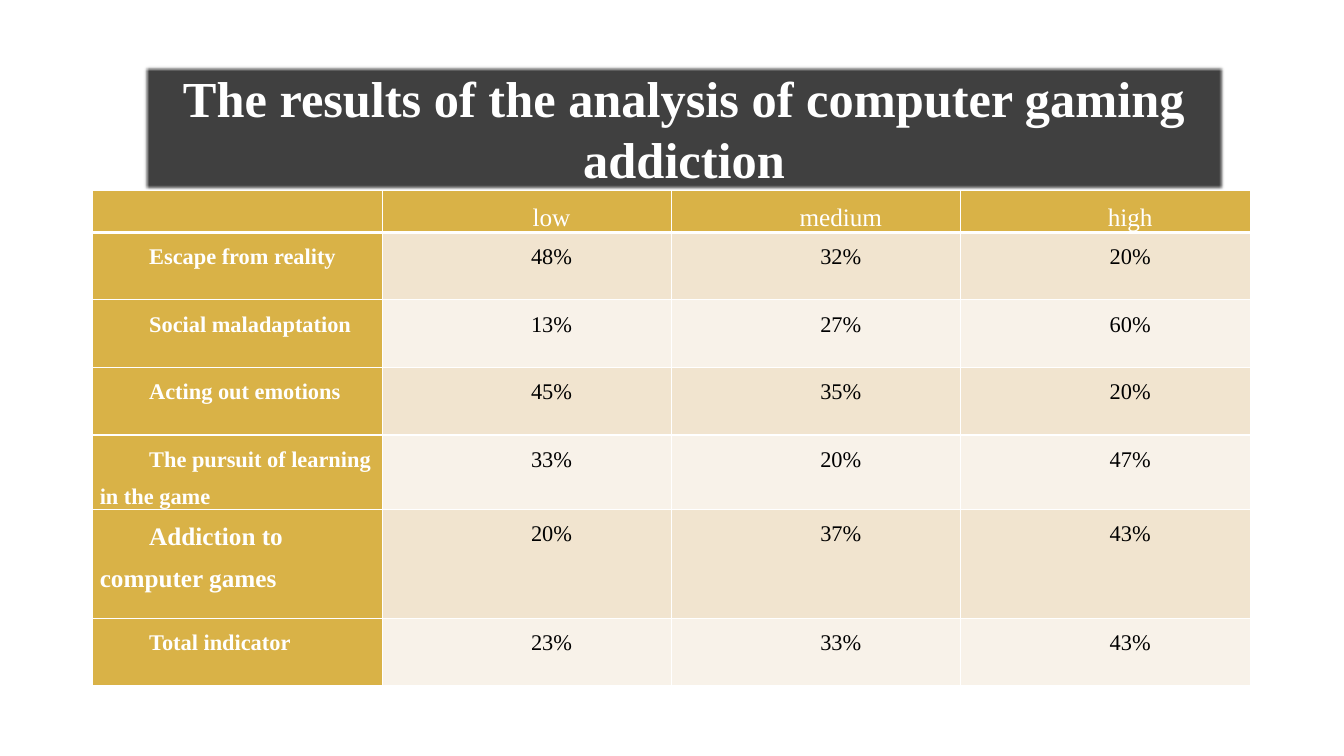
from lxml import etree
from pptx import Presentation
from pptx.dml.color import RGBColor
from pptx.enum import shapes, text
from pptx.oxml.ns import qn
from pptx.util import Inches, Pt

FONT = "Times New Roman"
WHITE, BLACK, CHARCOAL = "FFFFFF", "000000", "404040"
GOLD, SAND, CREAM = "D9B247", "F1E4CF", "F8F2E9"
LEVELS = ["", "low", "medium", "high"]
RESULTS = [
    ("Escape from reality", "48%", "32%", "20%"),
    ("Social maladaptation", "13%", "27%", "60%"),
    ("Acting out emotions", "45%", "35%", "20%"),
    ("The pursuit of learning in the game", "33%", "20%", "47%"),
    ("Addiction to computer games", "20%", "37%", "43%"),
    ("Total indicator", "23%", "33%", "43%"),
]
LARGE_LABEL = "Addiction to computer games"
TOTAL_LABEL = "Total indicator"
ROW_HEIGHTS = [0.09, 0.67, 0.67, 0.67, 0.67, 1.08, 0.67]
COLUMN_WIDTH = 2.87


def paint(color_format, color):
    color_format.rgb = RGBColor.from_string(color)


def fill(target, color):
    target.fill.solid()
    paint(target.fill.fore_color, color)


def add_run(paragraph, words, size, color, bold):
    run = paragraph.add_run()
    run.text = words
    run.font.name, run.font.size, run.font.bold = FONT, Pt(size), bold
    paint(run.font.color, color)


def add_title(slide, words):
    banner = slide.shapes.add_shape(
        shapes.MSO_SHAPE.RECTANGLE,
        Inches(1.42), Inches(0.65), Inches(10.73), Inches(1.24))
    fill(banner, CHARCOAL)
    banner.line.fill.background()
    banner.shadow.inherit = False
    effects = banner._element.spPr.find(qn("a:effectLst"))
    etree.SubElement(effects, qn("a:softEdge"), rad=str(Pt(2.5)))
    frame = banner.text_frame
    frame.word_wrap = True
    frame.vertical_anchor = text.MSO_ANCHOR.MIDDLE
    paragraph = frame.paragraphs[0]
    paragraph.alignment = text.PP_ALIGN.CENTER
    add_run(paragraph, words, 36, WHITE, True)


def set_borders(cell, bottom_width):
    """Draw white cell borders; they must precede the cell's fill."""
    properties = cell._tc.get_or_add_tcPr()
    widths = {"a:lnL": 1, "a:lnR": 1, "a:lnT": 1, "a:lnB": bottom_width}
    for side, width in widths.items():
        line = etree.SubElement(properties, qn(side), w=str(Pt(width)))
        solid = etree.SubElement(line, qn("a:solidFill"))
        etree.SubElement(solid, qn("a:srgbClr"), val=WHITE)


def fill_cell(cell, words, background, size, color, bold, alignment):
    set_borders(cell, 3 if cell._tc.row_idx == 0 else 1)
    fill(cell, background)
    cell.margin_left = cell.margin_right = Inches(0.07)
    cell.margin_top = cell.margin_bottom = 0
    if not words:
        return
    paragraph = cell.text_frame.paragraphs[0]
    paragraph.alignment = alignment
    paragraph.line_spacing = 1.5
    indents = paragraph._p.get_or_add_pPr()
    indents.set("marL", "0")
    indents.set("indent", str(Inches(0.49)))
    add_run(paragraph, words, size, color, bold)


def add_results_table(slide):
    frame = slide.shapes.add_table(
        len(ROW_HEIGHTS), len(LEVELS), Inches(0.92), Inches(1.89),
        Inches(COLUMN_WIDTH * len(LEVELS)), Inches(4.91))
    table = frame.table
    for column in table.columns:
        column.width = Inches(COLUMN_WIDTH)
    for row, height in zip(table.rows, ROW_HEIGHTS):
        row.height = Inches(height)
    frame.height = Inches(4.91)

    align = text.PP_ALIGN
    for cell, level in zip(table.rows[0].cells, LEVELS):
        fill_cell(cell, level, GOLD, 18, WHITE, False, align.CENTER)
    for index, (label, *shares) in enumerate(RESULTS):
        label_cell, *share_cells = table.rows[index + 1].cells
        fill_cell(label_cell, label, GOLD, 18 if label == LARGE_LABEL else 16,
                  WHITE, True,
                  align.JUSTIFY if label == TOTAL_LABEL else align.LEFT)
        band = CREAM if index % 2 else SAND
        for cell, share in zip(share_cells, shares):
            fill_cell(cell, share, band, 16, BLACK, False, align.CENTER)


def main():
    deck = Presentation()
    deck.slide_width, deck.slide_height = Inches(13.33), Inches(7.5)
    slide = deck.slides.add_slide(deck.slide_layouts[6])
    add_title(slide, "The results of the analysis of computer gaming addiction")
    add_results_table(slide)
    deck.save("out.pptx")


if __name__ == "__main__":
    main()
